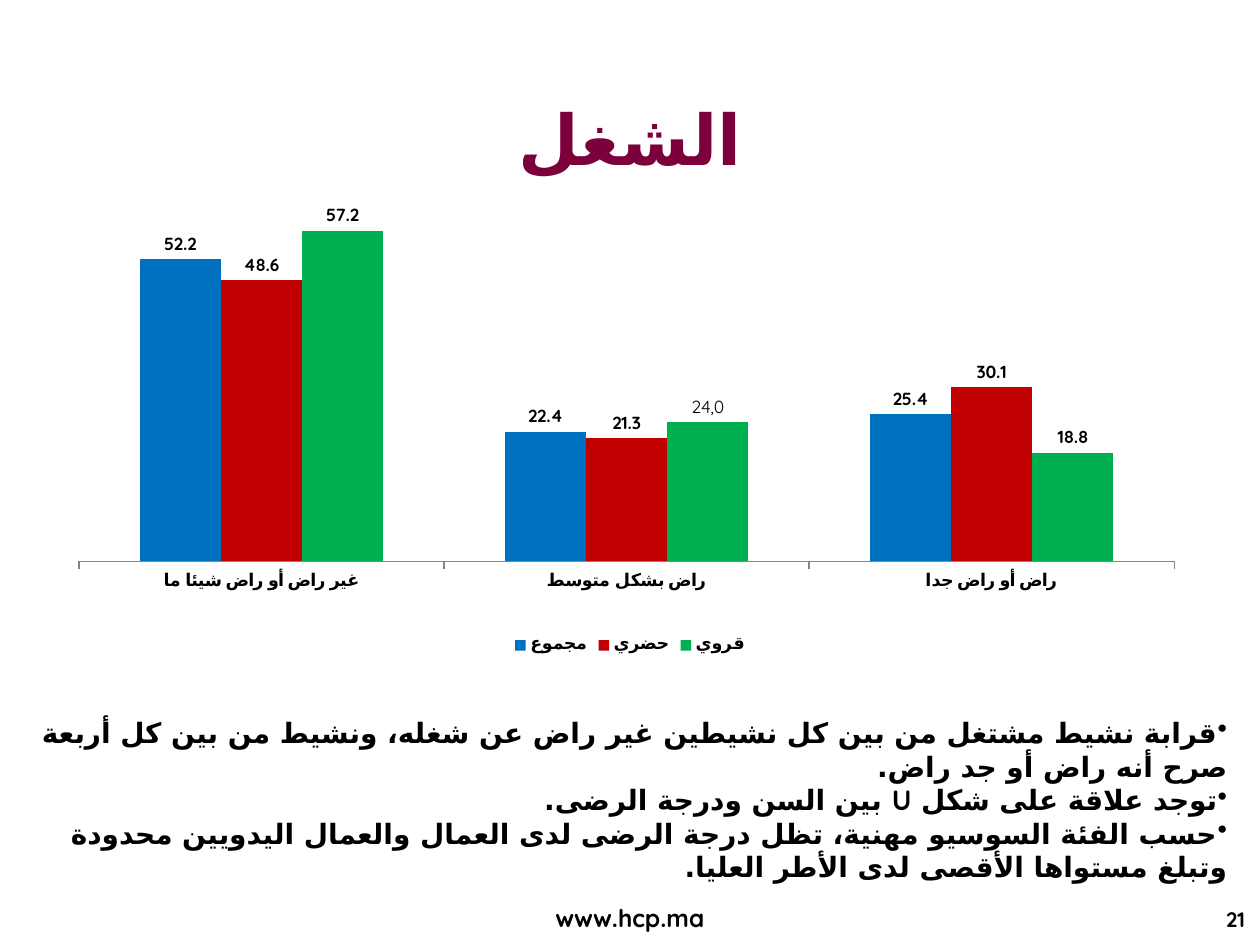
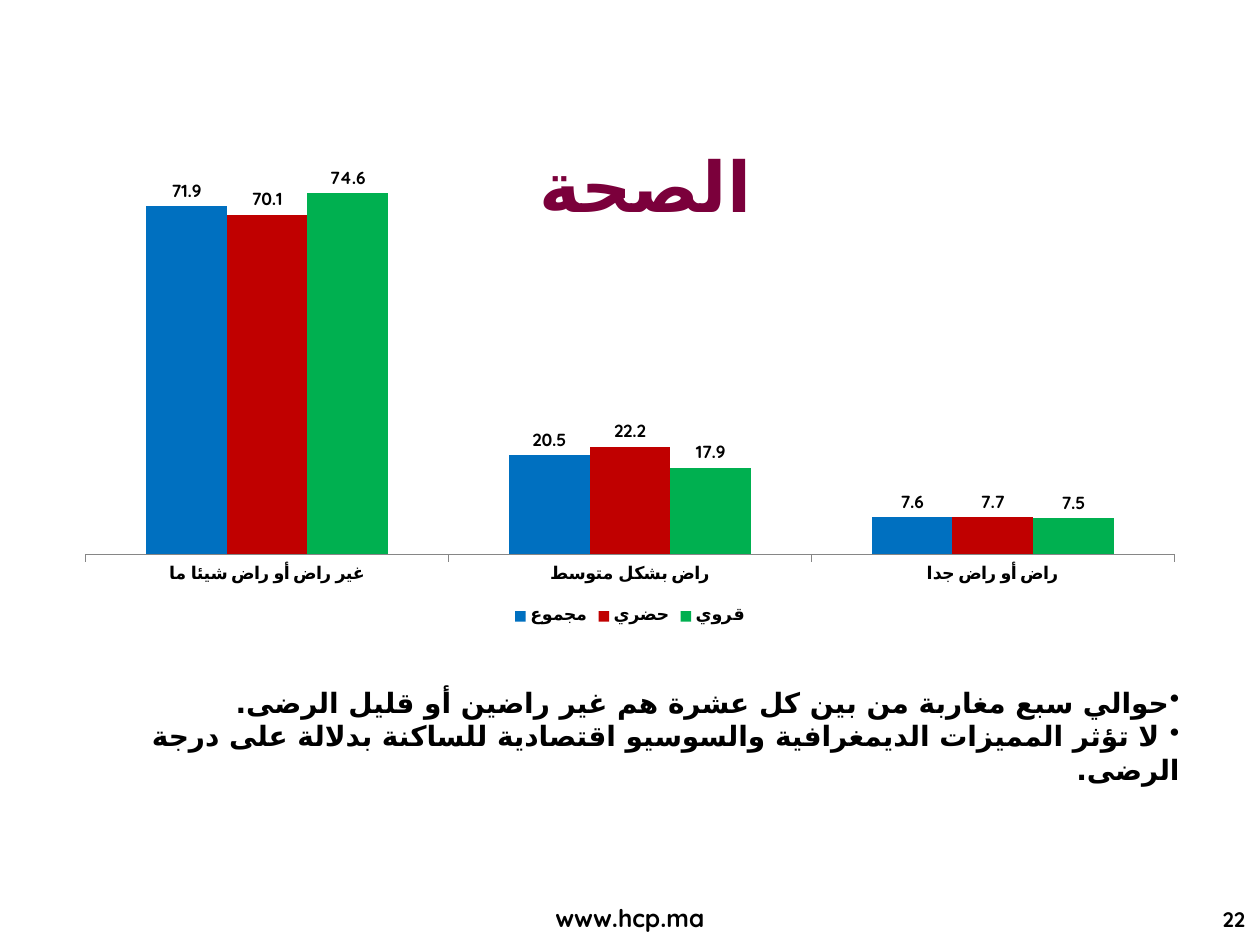
from lxml.etree import SubElement
from pptx import Presentation
from pptx.chart.data import CategoryChartData
from pptx.dml.color import RGBColor
from pptx.enum.chart import XL_CHART_TYPE, XL_LABEL_POSITION, XL_LEGEND_POSITION, XL_TICK_MARK
from pptx.enum.text import MSO_ANCHOR, MSO_AUTO_SIZE, PP_ALIGN
from pptx.oxml.ns import qn
from pptx.util import Inches, Pt

BLACK = RGBColor(0, 0, 0)
MAROON = RGBColor(0x7B, 0x00, 0x3B)
AXIS_GRAY = RGBColor(0x86, 0x86, 0x86)
SERIES_COLORS = {
    "مجموع": RGBColor(0x00, 0x70, 0xC0),
    "حضري": RGBColor(0xC0, 0x00, 0x00),
    "قروي": RGBColor(0x00, 0xB0, 0x50),
}
CATEGORIES = ["غير راض أو راض شيئا ما", "راض بشكل متوسط", "راض أو راض جدا"]
TITLE_FONT = "Comic Neue"
BODY_FONT = "Quicksand"
ARABIC_FONT = "DejaVu Sans"


def add_span(para, text, size, color=BLACK, font=BODY_FONT):
    span = para.add_run()
    span.text = text
    span.font.size = Pt(size)
    span.font.bold = True
    span.font.name = font
    span.font.color.rgb = color
    SubElement(span.font._element, qn("a:cs"), typeface=ARABIC_FONT)


def add_box(page, place, anchor=MSO_ANCHOR.TOP):
    box = page.shapes.add_textbox(*map(Inches, place))
    box.text_frame.word_wrap = True
    box.text_frame.vertical_anchor = anchor
    return box.text_frame


def add_line_of_text(page, place, text, size, align, anchor=MSO_ANCHOR.MIDDLE, **style):
    para = add_box(page, place, anchor).paragraphs[0]
    para.alignment = align
    add_span(para, text, size, **style)


def add_title(page, place, text):
    add_line_of_text(page, place, text, 40, PP_ALIGN.CENTER, color=MAROON, font=TITLE_FONT)


def add_footer(page, number):
    add_line_of_text(page, (3.82, 7.12, 2.36, 0.33), "www.hcp.ma", 14,
                     PP_ALIGN.CENTER, MSO_ANCHOR.TOP)
    add_line_of_text(page, (8.46, 7.12, 1.52, 0.35), str(number), 12, PP_ALIGN.RIGHT)


def add_findings(page, place, findings):
    frame = add_box(page, place)
    frame.auto_size = MSO_AUTO_SIZE.SHAPE_TO_FIT_TEXT
    for index, finding in enumerate(findings):
        para = frame.add_paragraph() if index else frame.paragraphs[0]
        para.alignment = PP_ALIGN.RIGHT
        properties = para._p.get_or_add_pPr()
        properties.set("rtl", "1")
        SubElement(properties, qn("a:buChar"), char="•")
        add_span(para, finding, 16)


def set_plot_area(chart, area):
    plot_area = chart._chartSpace.chart.plotArea
    layout = plot_area.find(qn("c:layout"))
    if layout is None:
        layout = SubElement(plot_area, qn("c:layout"))
        plot_area.insert(0, layout)
    manual = SubElement(layout, qn("c:manualLayout"))
    settings = [("layoutTarget", "inner"), ("xMode", "edge"), ("yMode", "edge")]
    for name, value in settings + list(zip("xywh", area)):
        SubElement(manual, qn(f"c:{name}"), val=str(value))


def style_font(font, bold):
    font.name = BODY_FONT
    font.size = Pt(10)
    font.bold = bold
    font.color.rgb = BLACK


def add_satisfaction_chart(page, place, values, top_value, plot_area):
    data = CategoryChartData(number_format="0.0")
    data.categories = CATEGORIES
    for name, shares in zip(SERIES_COLORS, values):
        data.add_series(name, shares)
    chart = page.shapes.add_chart(
        XL_CHART_TYPE.COLUMN_CLUSTERED, *map(Inches, place), data).chart
    style_font(chart.font, False)
    chart.has_title = False
    chart.has_legend = True
    chart.legend.position = XL_LEGEND_POSITION.BOTTOM
    chart.legend.include_in_layout = False
    style_font(chart.legend.font, True)
    set_plot_area(chart, plot_area)

    value_axis = chart.value_axis
    value_axis.minimum_scale = 0
    value_axis.maximum_scale = top_value
    value_axis.has_major_gridlines = False
    value_axis.visible = False
    category_axis = chart.category_axis
    category_axis.major_tick_mark = XL_TICK_MARK.OUTSIDE
    category_axis.format.line.color.rgb = AXIS_GRAY
    style_font(category_axis.tick_labels.font, True)

    plot = chart.plots[0]
    plot.gap_width = 150
    plot.overlap = 0
    plot.vary_by_categories = False
    for series, color in zip(plot.series, SERIES_COLORS.values()):
        series.format.fill.solid()
        series.format.fill.fore_color.rgb = color
        series.invert_if_negative = False
        labels = series.data_labels
        labels.show_value = True
        labels.position = XL_LABEL_POSITION.OUTSIDE_END
        style_font(labels.font, True)
    return chart


def relabel_point(chart, series_index, point_index, text):
    label = chart.plots[0].series[series_index].points[point_index].data_label
    span = label.text_frame.paragraphs[0].add_run()
    span.text = text
    style_font(span.font, False)
    label.position = XL_LABEL_POSITION.OUTSIDE_END


def add_page(deck, number):
    page = deck.slides.add_slide(deck.slide_layouts[6])
    add_footer(page, number)
    return page


def add_work_page(deck):
    page = add_page(deck, 21)
    add_title(page, (0.5, 0.62, 9, 0.94), "الشغل")
    chart = add_satisfaction_chart(
        page, (0.5, 1.09, 9, 4.14),
        [(52.2, 22.4, 25.4), (48.6, 21.3, 30.1), (57.2, 24, 18.8)],
        70, (0.014, 0.037, 0.966, 0.776))
    relabel_point(chart, 2, 1, "24,0")
    add_findings(page, (0, 5.63, 9.84, 0.91), [
        "قرابة نشيط مشتغل من بين كل نشيطين غير راض عن شغله، ونشيط من بين كل أربعة صرح أنه راض أو جد راض.",
        "توجد علاقة على شكل U بين السن ودرجة الرضى.",
        "حسب الفئة السوسيو مهنية، تظل درجة الرضى لدى العمال والعمال اليدويين محدودة وتبلغ مستواها الأقصى لدى الأطر العليا.",
    ])


def add_health_page(deck):
    page = add_page(deck, 22)
    add_title(page, (1.3, 0.84, 7.64, 1.25), "الصحة")
    add_satisfaction_chart(
        page, (0.5, 1.25, 9, 3.75),
        [(71.9, 20.5, 7.6), (70.1, 22.2, 7.7), (74.6, 17.9, 7.5)],
        80, (0.02, 0.02, 0.96, 0.82))
    add_findings(page, (0.94, 5.39, 8.52, 0.64), [
        "حوالي سبع مغاربة من بين كل عشرة هم غير راضين أو قليل الرضى.",
        " لا تؤثر المميزات الديمغرافية والسوسيو اقتصادية للساكنة بدلالة على درجة الرضى.",
    ])


def main():
    deck = Presentation()
    deck.slide_width = Inches(10)
    deck.slide_height = Inches(7.5)
    add_work_page(deck)
    add_health_page(deck)
    deck.save("out.pptx")


if __name__ == "__main__":
    main()
